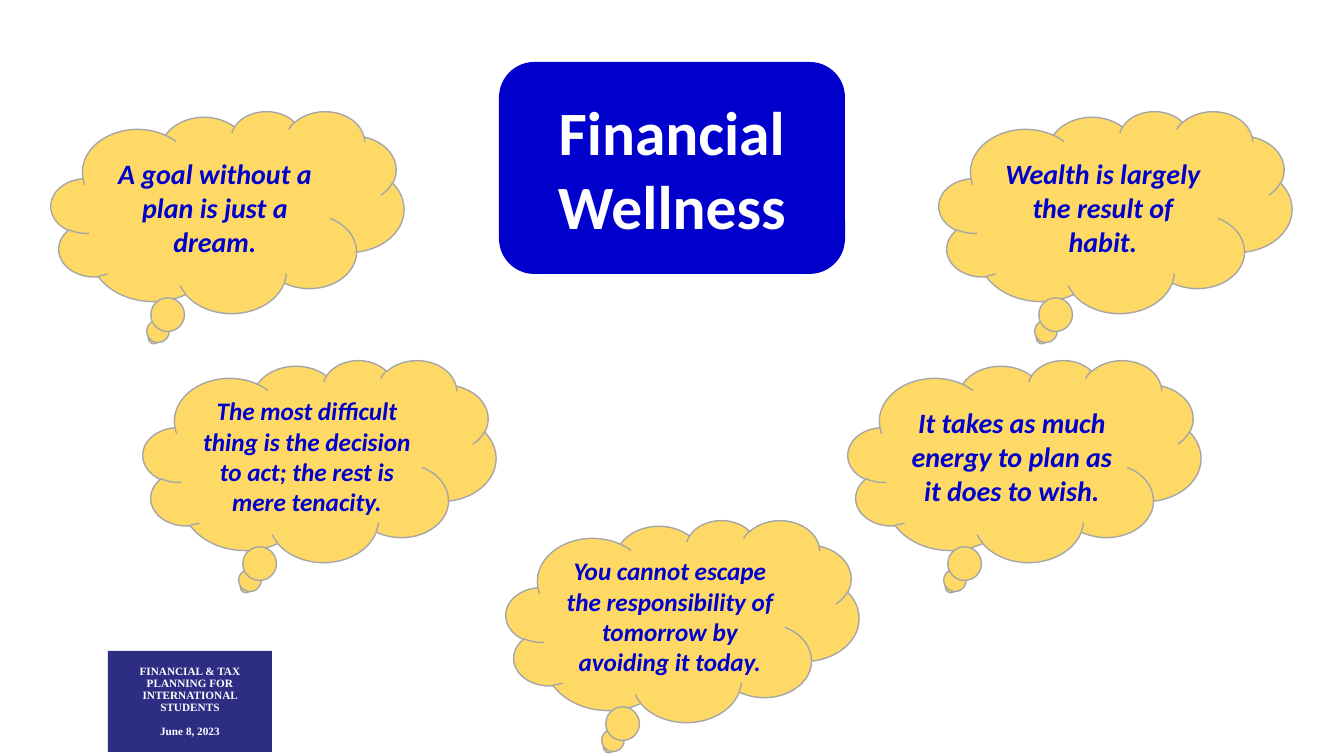
from dataclasses import dataclass

from pptx import Presentation
from pptx.dml.color import RGBColor
from pptx.enum.shapes import MSO_SHAPE
from pptx.enum.text import MSO_ANCHOR, PP_ALIGN
from pptx.util import Emu, Pt

PX = 914400 / 100.8
RECTANGLE = MSO_SHAPE.RECTANGLE
ROUNDED = MSO_SHAPE.ROUNDED_RECTANGLE
CLOUD = MSO_SHAPE.CLOUD_CALLOUT
CENTER = PP_ALIGN.CENTER
MIDDLE = MSO_ANCHOR.MIDDLE


@dataclass(frozen=True)
class Theme:
    blue: str = "0000CC"
    navy: str = "2D2D83"
    yellow: str = "FFD966"
    gray: str = "A6A6A6"
    white: str = "FFFFFF"
    sans: str = "Calibri"
    serif: str = "Times New Roman"
    title_size: int = 44
    quote_size: int = 20
    long_quote_size: int = 18
    footer_size: int = 8


THEME = Theme()
CLOUD_SIZE = (353, 202)
QUOTES = [
    (51, 111, THEME.quote_size, "A goal without a plan is just a dream."),
    (143, 360, THEME.long_quote_size,
     "The most difficult thing is the decision to act; the rest is mere tenacity."),
    (939, 111, THEME.quote_size, "Wealth is largely the result of habit."),
    (848, 360, THEME.quote_size,
     "It takes as much energy to plan as it does to wish."),
    (506, 520, THEME.long_quote_size,
     "You cannot escape the responsibility of tomorrow by avoiding it today."),
]


def px(length):
    return Emu(round(length * PX))


class Page:
    """One slide together with the style of its elements."""

    def __init__(self, deck, theme):
        self.theme = theme
        self.shapes = deck.slides.add_slide(deck.slide_layouts[6]).shapes

    def block(self, kind, bounds, fill, outline=None):
        shape = self.shapes.add_shape(kind, *map(px, bounds))
        shape.shadow.inherit = False
        shape.fill.solid()
        shape.fill.fore_color.rgb = RGBColor.from_string(fill)
        if outline:
            shape.line.color.rgb = RGBColor.from_string(outline)
            shape.line.width = Pt(1)
        else:
            shape.line.fill.background()
        return shape

    def label(self, shape, lines, size, color, name, italic=False, **spacing):
        """Fill the shape with centred bold paragraphs; spacing sets their format."""
        frame = shape.text_frame
        frame.word_wrap = True
        frame.vertical_anchor = MIDDLE
        frame.text = "\n".join(lines)
        font_format = {"size": Pt(size), "name": name, "bold": True, "italic": italic}
        for para in frame.paragraphs:
            para.alignment = CENTER
            for key, value in spacing.items():
                setattr(para, key, value)
            for span in para.runs:
                for key, value in font_format.items():
                    setattr(span.font, key, value)
                span.font.color.rgb = RGBColor.from_string(color)
        return frame

    def title(self, bounds, text):
        theme = self.theme
        box = self.block(ROUNDED, bounds, theme.blue)
        self.label(box, [text], theme.title_size, theme.white, theme.sans)

    def thought(self, left, top, size, text):
        theme = self.theme
        cloud = self.block(CLOUD, (left, top, *CLOUD_SIZE), theme.yellow, theme.gray)
        self.label(cloud, [text], size, theme.blue, theme.sans, italic=True)

    def footer(self, bounds, event, date):
        theme = self.theme
        box = self.block(RECTANGLE, bounds, theme.navy)
        frame = self.label(box, [event, date], theme.footer_size, theme.white,
                           theme.serif, line_spacing=0.9)
        frame.paragraphs[1].space_before = Pt(8.5)


def main():
    deck = Presentation()
    deck.slide_width, deck.slide_height = px(1344), px(756)
    page = Page(deck, THEME)
    page.footer((108, 651, 164, 101),
                "FINANCIAL & TAX PLANNING FOR INTERNATIONAL STUDENTS", "June 8, 2023")
    page.title((499, 62, 346, 212), "Financial Wellness")
    for quote in QUOTES:
        page.thought(*quote)
    deck.save("out.pptx")


if __name__ == "__main__":
    main()
